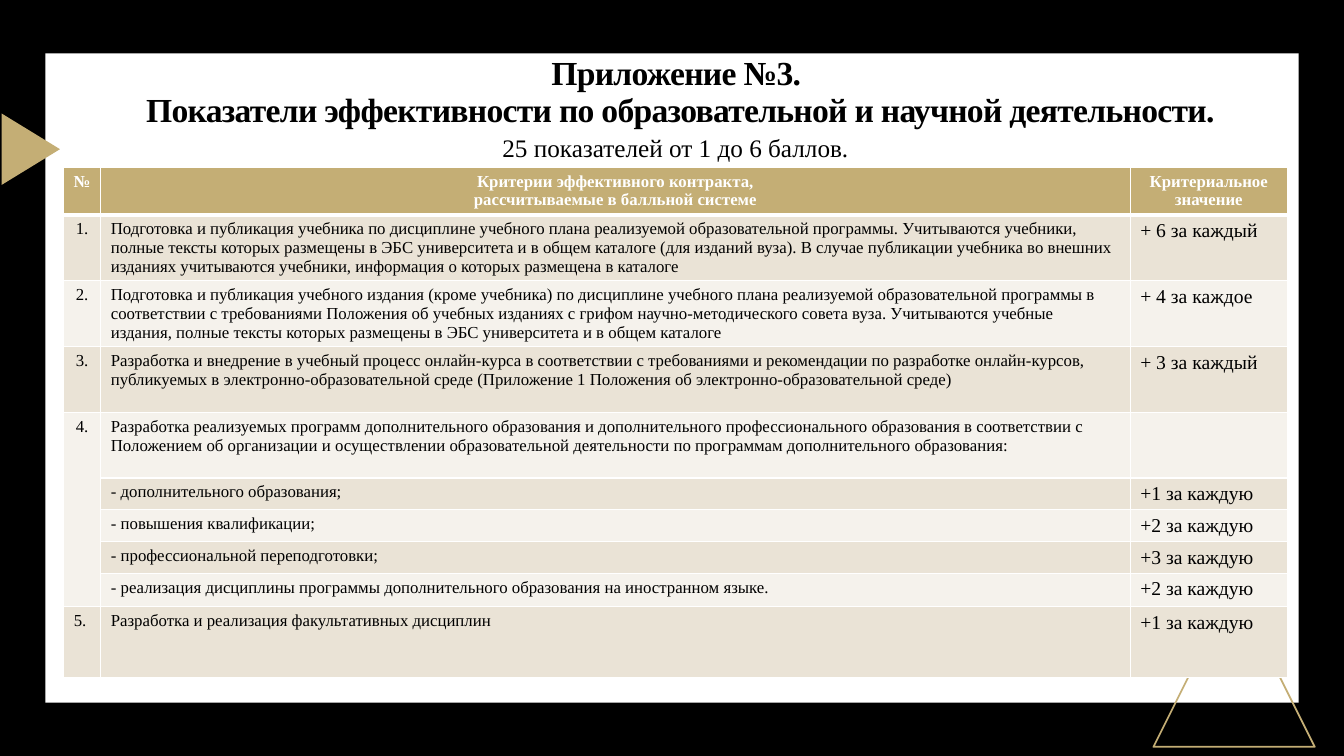
"""Build the slide with performance indicators for teaching and research."""
from lxml.etree import SubElement
from pptx import Presentation
from pptx.dml.color import RGBColor
from pptx.enum.shapes import MSO_SHAPE
from pptx.enum.text import MSO_ANCHOR, MSO_AUTO_SIZE, PP_ALIGN
from pptx.oxml.ns import qn
from pptx.util import Inches, Pt

BLACK = RGBColor(0x00, 0x00, 0x00)
WHITE = RGBColor(0xFF, 0xFF, 0xFF)
GOLD = RGBColor(0xC4, 0xAE, 0x75)
BAND_DARK = RGBColor(0xEA, 0xE3, 0xD6)
BAND_LIGHT = RGBColor(0xF5, 0xF2, 0xEC)
FONT = "Times New Roman"

COLUMN_WIDTHS = [0.37, 10.21, 1.56]
ROW_HEIGHTS = [0.47] + [0.65] * 4 + [0.31] * 3 + [0.33, 0.7]
HEADER = ["№", "Критерии эффективного контракта,\nрассчитываемые в балльной системе",
          "Критериальное значение"]
CRITERIA = [
    ("1.", "Подготовка и публикация учебника по дисциплине учебного плана реализуемой "
     "образовательной программы. Учитываются учебники, полные тексты которых размещены в ЭБС "
     "университета и в общем каталоге (для изданий вуза). В случае публикации учебника во внешних "
     "изданиях учитываются учебники, информация о которых размещена в каталоге",
     "+ 6 за каждый"),
    ("2.", "Подготовка и публикация учебного издания (кроме учебника) по дисциплине учебного "
     "плана реализуемой образовательной программы в соответствии с требованиями Положения об "
     "учебных изданиях с грифом научно-методического совета вуза. Учитываются учебные издания, "
     "полные тексты которых размещены в ЭБС университета и в общем каталоге",
     "+ 4 за каждое"),
    ("3.", "Разработка и внедрение в учебный процесс онлайн-курса в соответствии с требованиями "
     "и рекомендации по разработке онлайн-курсов, публикуемых в электронно-образовательной "
     "среде (Приложение 1 Положения об электронно-образовательной среде)",
     "+ 3 за каждый"),
    ("4.", "Разработка реализуемых программ дополнительного образования и дополнительного "
     "профессионального образования в соответствии с Положением об организации и осуществлении "
     "образовательной деятельности по программам дополнительного образования:", ""),
    ("", "- дополнительного образования;", "+1 за каждую"),
    ("", "- повышения квалификации;", "+2 за каждую"),
    ("", "- профессиональной переподготовки;", "+3 за каждую"),
    ("", "- реализация дисциплины программы дополнительного образования на иностранном языке.",
     "+2 за каждую"),
    ("5. ", "Разработка и реализация факультативных дисциплин", "+1 за каждую"),
]


def write_text(text_frame, text, size=12, color=BLACK, bold=False, align=PP_ALIGN.LEFT,
               line_spacing=None, character_spacing=None):
    """Fill a text frame and format all its paragraphs."""
    text_frame.text = text
    for paragraph in text_frame.paragraphs:
        paragraph.alignment = align
        if line_spacing:
            paragraph.line_spacing = line_spacing
        for font in [paragraph.font] + [run.font for run in paragraph.runs]:
            font.name = FONT
            font.size = Pt(size)
            font.bold = bold
            font.color.rgb = color
        if character_spacing:
            for run in paragraph.runs:
                run.font._element.set("spc", str(int(character_spacing * 100)))


def add_figure(slide, preset, left, top, width, height, fill=None, line=None, rotation=0):
    """Add a preset shape with an optional fill and outline."""
    shape = slide.shapes.add_shape(
        preset, Inches(left), Inches(top), Inches(width), Inches(height))
    shape.shadow.inherit = False
    shape.rotation = rotation
    if fill is None:
        shape.fill.background()
    else:
        shape.fill.solid()
        shape.fill.fore_color.rgb = fill
    if line is None:
        shape.line.fill.background()
    else:
        shape.line.color.rgb = line
        shape.line.width = Pt(1.25)


def set_title(slide):
    """Place and format the slide title."""
    title = slide.shapes.title
    title.left, title.top = Inches(0.71), Inches(0.66)
    title.width, title.height = Inches(12.07), Inches(0.53)
    text_frame = title.text_frame
    write_text(text_frame, "Приложение №3. \vПоказатели эффективности по образовательной "
               "и научной деятельности.", size=24, bold=True, align=PP_ALIGN.CENTER,
               line_spacing=0.9, character_spacing=-0.5)
    text_frame.word_wrap = True
    text_frame.auto_size = MSO_AUTO_SIZE.NONE
    text_frame.vertical_anchor = MSO_ANCHOR.MIDDLE


def add_subtitle(slide):
    """Add the line with the number of indicators."""
    box = slide.shapes.add_textbox(Inches(0.63), Inches(1.26), Inches(12.14), Inches(0.4))
    box.text_frame.word_wrap = True
    write_text(box.text_frame, "25 показателей от 1 до 6 баллов.", size=18,
               align=PP_ALIGN.CENTER)


def format_cell(cell, fill, bottom_width=1):
    """Give a cell its fill and white borders."""
    properties = cell._tc.get_or_add_tcPr()
    for side, width in (("L", 1), ("R", 1), ("T", 1), ("B", bottom_width)):
        border = SubElement(properties, qn(f"a:ln{side}"), w=str(Pt(width)))
        border_fill = SubElement(border, qn("a:solidFill"))
        SubElement(border_fill, qn("a:srgbClr"), val=str(WHITE))
    cell.fill.solid()
    cell.fill.fore_color.rgb = fill


def add_criteria_table(slide):
    """Add the banded table of criteria and their values."""
    table = slide.shapes.add_table(
        len(ROW_HEIGHTS), len(COLUMN_WIDTHS), Inches(0.63), Inches(1.66),
        Inches(sum(COLUMN_WIDTHS)), Inches(sum(ROW_HEIGHTS))).table
    for column, width in zip(table.columns, COLUMN_WIDTHS):
        column.width = Inches(width)
    for row, height in zip(table.rows, ROW_HEIGHTS):
        row.height = Inches(height)
    for cell, text in zip(table.rows[0].cells, HEADER):
        write_text(cell.text_frame, text, color=WHITE, bold=True, align=PP_ALIGN.CENTER)
        format_cell(cell, GOLD, bottom_width=3)
    column_formats = [{"align": PP_ALIGN.CENTER}, {}, {"size": 14}]
    for row_index, criterion in enumerate(CRITERIA, start=1):
        band = BAND_DARK if row_index % 2 else BAND_LIGHT
        for cell, text, text_format in zip(
                table.rows[row_index].cells, criterion, column_formats):
            write_text(cell.text_frame, text, **text_format)
            format_cell(cell, band)
    table.cell(4, 0).merge(table.cell(8, 0))


def main():
    """Create the presentation and save it."""
    presentation = Presentation()
    presentation.slide_width = Inches(13.33)
    presentation.slide_height = Inches(7.5)
    slide = presentation.slides.add_slide(presentation.slide_layouts[5])
    slide.background.fill.solid()
    slide.background.fill.fore_color.rgb = BLACK
    add_figure(slide, MSO_SHAPE.RECTANGLE, 0.45, 0.53, 12.43, 6.44, fill=WHITE)
    add_figure(slide, MSO_SHAPE.ISOSCELES_TRIANGLE, 11.44, 5.81, 1.6, 1.6, line=GOLD)
    add_figure(slide, MSO_SHAPE.ISOSCELES_TRIANGLE, -0.05, 1.19, 0.71, 0.58, fill=GOLD,
               rotation=90)
    set_title(slide)
    title_element = slide.shapes.title._element
    title_element.getparent().append(title_element)
    add_criteria_table(slide)
    add_subtitle(slide)
    presentation.save("out.pptx")


if __name__ == "__main__":
    main()
